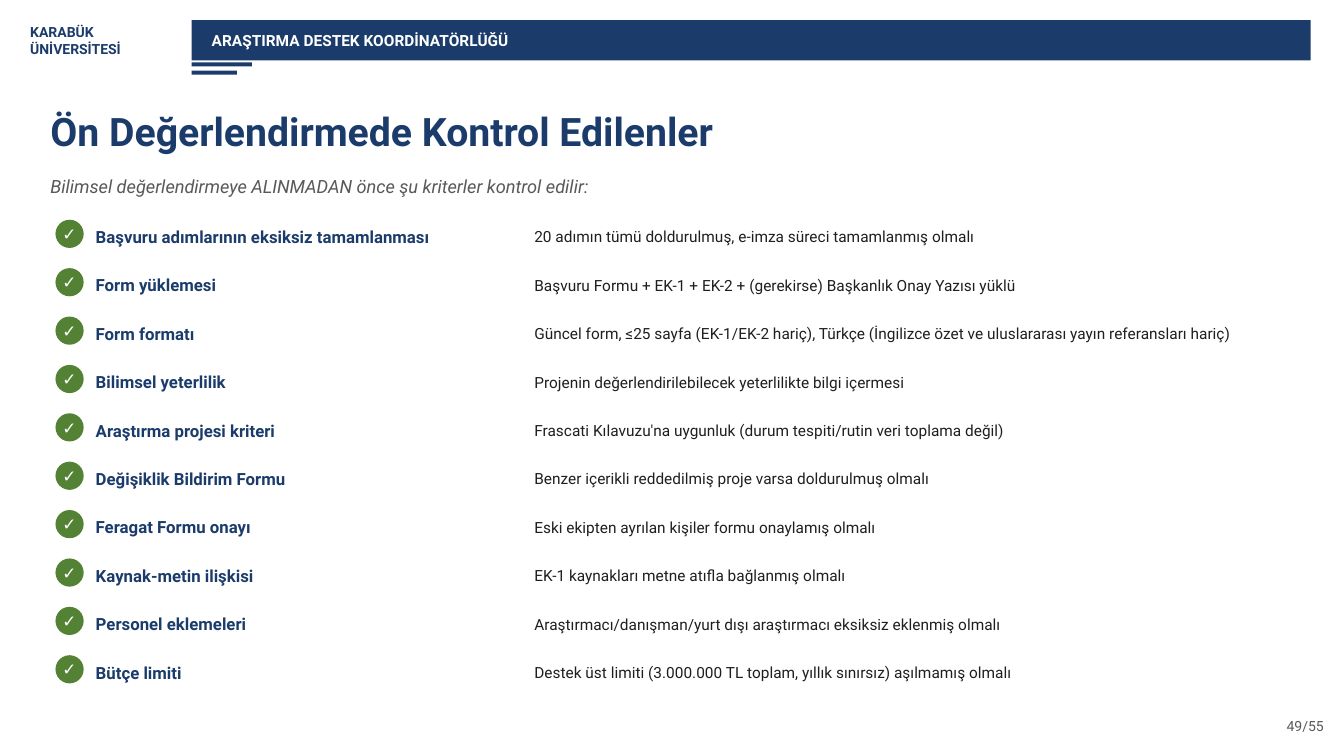
import dataclasses

import pptx
import pptx.dml.color
import pptx.enum.shapes
import pptx.enum.text
import pptx.util
from pptx.enum.shapes import MSO_SHAPE
from pptx.enum.text import PP_ALIGN
from pptx.util import Inches

NAVY = "1B3C6B"
GREEN = "548235"
GREY = "595959"
BLACK = "1F1F1F"
WHITE = "FFFFFF"
FONT = "Roboto"

FIRST_ROW_TOP = 2.15
ROW_STEP = 0.48
ROW_HEIGHT = 0.4


@dataclasses.dataclass(frozen=True)
class Box:
    left: float
    top: float
    width: float
    height: float


@dataclasses.dataclass(frozen=True)
class Criterion:
    name: str
    detail: str


CRITERIA = [
    Criterion("Başvuru adımlarının eksiksiz tamamlanması",
              "20 adımın tümü doldurulmuş, e-imza süreci tamamlanmış olmalı"),
    Criterion("Form yüklemesi",
              "Başvuru Formu + EK-1 + EK-2 + (gerekirse) Başkanlık Onay Yazısı yüklü"),
    Criterion("Form formatı",
              "Güncel form, ≤25 sayfa (EK-1/EK-2 hariç), Türkçe "
              "(İngilizce özet ve uluslararası yayın referansları hariç)"),
    Criterion("Bilimsel yeterlilik",
              "Projenin değerlendirilebilecek yeterlilikte bilgi içermesi"),
    Criterion("Araştırma projesi kriteri",
              "Frascati Kılavuzu'na uygunluk (durum tespiti/rutin veri toplama değil)"),
    Criterion("Değişiklik Bildirim Formu",
              "Benzer içerikli reddedilmiş proje varsa doldurulmuş olmalı"),
    Criterion("Feragat Formu onayı",
              "Eski ekipten ayrılan kişiler formu onaylamış olmalı"),
    Criterion("Kaynak-metin ilişkisi",
              "EK-1 kaynakları metne atıfla bağlanmış olmalı"),
    Criterion("Personel eklemeleri",
              "Araştırmacı/danışman/yurt dışı araştırmacı eksiksiz eklenmiş olmalı"),
    Criterion("Bütçe limiti",
              "Destek üst limiti (3.000.000 TL toplam, yıllık sınırsız) aşılmamış olmalı"),
]


def color(value: str) -> pptx.dml.color.RGBColor:
    return pptx.dml.color.RGBColor.from_string(value)


def edges(box: Box) -> list[pptx.util.Length]:
    return [Inches(length) for length in dataclasses.astuple(box)]


def write(shape, text: str, *, size: float, fill: str = NAVY, bold: bool = False,
          italic: bool = False, align: PP_ALIGN = PP_ALIGN.LEFT,
          left_margin: float = 0, wrap: bool = True) -> None:
    """Put text into a shape, one paragraph for each line."""
    frame = shape.text_frame
    frame.text = text
    frame.word_wrap = wrap
    frame.auto_size = pptx.enum.text.MSO_AUTO_SIZE.NONE
    frame.vertical_anchor = pptx.enum.text.MSO_ANCHOR.MIDDLE
    frame.margin_left = Inches(left_margin)
    frame.margin_top = frame.margin_right = frame.margin_bottom = 0
    for paragraph in frame.paragraphs:
        paragraph.alignment = align
        for run in paragraph.runs:
            run.font.name = FONT
            run.font.size = pptx.util.Pt(size)
            run.font.bold = bold
            run.font.italic = italic
            run.font.color.rgb = color(fill)


def add_text(slide, box: Box, text: str, **text_format) -> None:
    write(slide.shapes.add_textbox(*edges(box)), text, **text_format)


def add_shape(slide, kind: MSO_SHAPE, box: Box, fill: str):
    shape = slide.shapes.add_shape(kind, *edges(box))
    shape.shadow.inherit = False
    shape.fill.solid()
    shape.fill.fore_color.rgb = color(fill)
    shape.line.fill.background()
    return shape


def add_header(slide) -> None:
    add_text(slide, Box(0.3, 0.15, 1.5, 0.5), "KARABÜK\nÜNİVERSİTESİ", size=10, bold=True)
    banner = add_shape(slide, MSO_SHAPE.RECTANGLE, Box(1.9, 0.2, 11.1, 0.4), NAVY)
    write(banner, "ARAŞTIRMA DESTEK KOORDİNATÖRLÜĞÜ", size=11, fill=WHITE,
          bold=True, left_margin=0.2)
    for top, width in ((0.62, 0.6), (0.7, 0.45)):
        add_shape(slide, MSO_SHAPE.RECTANGLE, Box(1.9, top, width, 0.04), NAVY)


def add_criterion(slide, criterion: Criterion, top: float) -> None:
    badge = add_shape(slide, MSO_SHAPE.OVAL, Box(0.55, top + 0.03, 0.28, 0.28), GREEN)
    write(badge, "✓", size=12, fill=WHITE, bold=True, align=PP_ALIGN.CENTER, wrap=False)
    add_text(slide, Box(0.95, top, 4.3, ROW_HEIGHT), criterion.name, size=12, bold=True)
    add_text(slide, Box(5.3, top, 7.7, ROW_HEIGHT), criterion.detail, size=11, fill=BLACK)


def main() -> None:
    presentation = pptx.Presentation()
    presentation.slide_width = Inches(13.33)
    presentation.slide_height = Inches(7.5)
    title_only = presentation.slide_layouts.get_by_name("Title Only")
    slide = presentation.slides.add_slide(title_only)

    # Header and page number
    add_header(slide)
    add_text(slide, Box(12.13, 7.05, 1, 0.3), "49/55", size=10, fill=GREY,
             align=PP_ALIGN.RIGHT)

    # Title and introduction
    title = slide.shapes.title
    title.left, title.top, title.width, title.height = edges(Box(0.5, 0.95, 12.3, 0.7))
    write(title, "Ön Değerlendirmede Kontrol Edilenler", size=28, bold=True)
    add_text(slide, Box(0.5, 1.65, 12.3, 0.4),
             "Bilimsel değerlendirmeye ALINMADAN önce şu kriterler kontrol edilir:",
             size=13, fill=GREY, italic=True)

    # Checklist
    for row, criterion in enumerate(CRITERIA):
        add_criterion(slide, criterion, FIRST_ROW_TOP + row * ROW_STEP)

    presentation.save("out.pptx")


if __name__ == "__main__":
    main()
